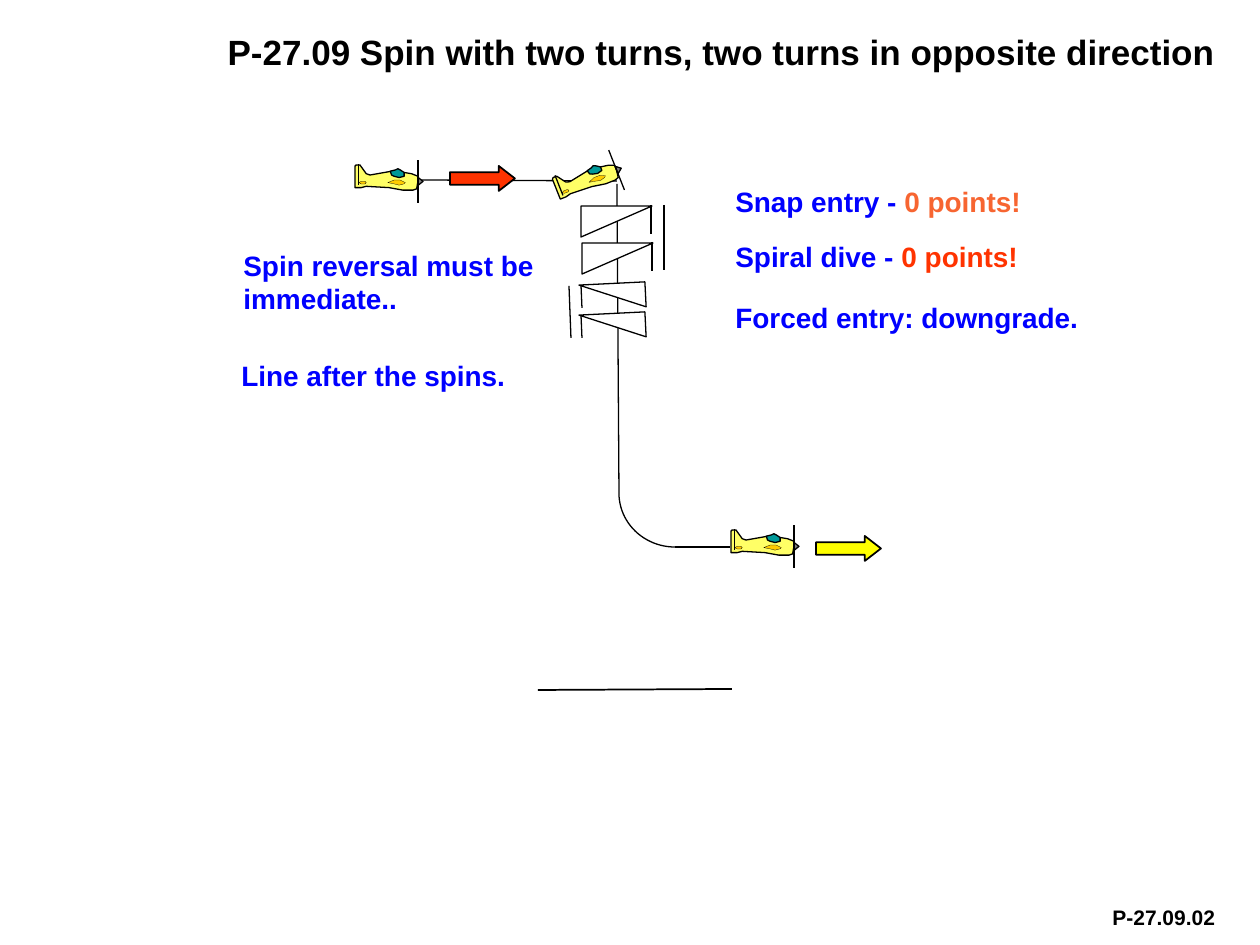
import math

import pptx
import pptx.dml.color
import pptx.enum.shapes
import pptx.enum.text
import pptx.oxml
import pptx.util

SHAPE = pptx.enum.shapes.MSO_SHAPE
ALIGN = pptx.enum.text.PP_ALIGN
SCALE = 914400 / 126
PLANE_UNIT = 1.26

FUSELAGE = [(39, 6), (45, 7), (50, 9), (50, 13), (49, 19), (46, 20), (38, 20),
            (27, 18), (9, 17), (5, 18), (0, 18), (0, 1), (1, 0), (4, 0), (9, 7),
            (12, 8), (29, 5), (30, 8), (35, 9), (38, 8)]
CANOPY = [(28, 5), (29, 8), (31, 9), (35, 10), (39, 9), (39, 6), (36, 4), (34, 3), (32, 4)]
WING = [(26, 14), (31, 12), (36, 12), (40, 14), (39, 15), (35, 16), (31, 15)]
TAILPLANE = [(3, 14), (5, 15), (8, 15), (9, 14), (8, 13), (5, 13)]
PLANE_PARTS = [(FUSELAGE, "FFFF66", 0.75), (CANOPY, "009999", 0.75),
               (WING, "FFCC00", 0.13), (TAILPLANE, "FFCC00", 0.13)]


def px(value):
    return pptx.util.Emu(round(value * SCALE))


def rgb(value):
    return pptx.dml.color.RGBColor.from_string(value)


def add_run(paragraph, text, size=16, color="0000FF", font="Arial", bold=True):
    run = paragraph.add_run()
    run.text = text
    run.font.name = font
    run.font.size = pptx.util.Pt(size)
    run.font.bold = bold
    run.font.color.rgb = rgb(color)


class SlideBuilder:
    def __init__(self, slide, ink="000000", width=0.75):
        self.slide = slide
        self.shapes = slide.shapes
        self.ink = ink
        self.width = width

    def outline(self, line, width):
        line.color.rgb = rgb(self.ink)
        line.width = pptx.util.Pt(width or self.width)

    def title(self, text, left, top, width, height):
        shape = self.shapes.title
        shape.left, shape.top, shape.width, shape.height = map(px, (left, top, width, height))
        frame = shape.text_frame
        frame.word_wrap = True
        frame.auto_size = pptx.enum.text.MSO_AUTO_SIZE.NONE
        frame.vertical_anchor = pptx.enum.text.MSO_ANCHOR.MIDDLE
        frame.paragraphs[0].alignment = ALIGN.LEFT
        add_run(frame.paragraphs[0], text, size=20, color=self.ink)

    def text(self, runs, left, top, width, height, align=ALIGN.LEFT, spacing=1.0, size=16):
        shape = self.shapes.add_textbox(*map(px, (left, top, width, height)))
        shape.text_frame.word_wrap = True
        paragraph = shape.text_frame.paragraphs[0]
        paragraph.alignment = align
        paragraph.line_spacing = spacing
        for text, color in runs:
            add_run(paragraph, text, size=size, color=color)

    def line(self, start, end, width=None):
        connector = self.shapes.add_connector(
            pptx.enum.shapes.MSO_CONNECTOR.STRAIGHT, *map(px, (*start, *end)))
        self.outline(connector.line, width)
        connector._element.spPr.append(pptx.oxml.parse_xml(
            '<a:effectLst xmlns:a="http://schemas.openxmlformats.org/drawingml/2006/main"/>'))

    def paint(self, shape, fill, width=None):
        shape.shadow.inherit = False
        if fill:
            shape.fill.solid()
            shape.fill.fore_color.rgb = rgb(fill)
        else:
            shape.fill.background()
        self.outline(shape.line, width)

    def preset(self, kind, left, top, width, height, fill=None, rotation=0,
               adjustments=(), flip=False, line_width=None):
        shape = self.shapes.add_shape(kind, *map(px, (left, top, width, height)))
        for index, value in enumerate(adjustments):
            shape.adjustments[index] = value
        shape.rotation = rotation
        if flip:
            shape._element.spPr.xfrm.set("flipH", "1")
        self.paint(shape, fill, line_width)

    def outline_shape(self, points, fill, width):
        start, *rest = [(px(x), px(y)) for x, y in points]
        builder = self.shapes.build_freeform(*start, scale=1.0)
        builder.add_line_segments(rest, close=True)
        self.paint(builder.convert_to_shape(), fill, width)

    def arrow(self, left, top, fill):
        self.preset(SHAPE.RIGHT_ARROW, left, top, 65, 25, fill,
                    adjustments=(0.5, 0.645), line_width=1)

    def plane(self, left, top, angle=0):
        cosine = math.cos(math.radians(angle)) * PLANE_UNIT
        sine = math.sin(math.radians(angle)) * PLANE_UNIT

        def place(point):
            x, y = point
            return left + x * cosine - y * sine, top + x * sine + y * cosine

        for points, fill, width in PLANE_PARTS:
            self.outline_shape(map(place, points), fill, width)
        self.line(place((3, 16)), place((3, -1)))
        nose_x, nose_y = place((52, 13))
        self.preset(SHAPE.ISOSCELES_TRIANGLE, nose_x - 4, nose_y - 2.5, 8, 5,
                    "808080", rotation=90 + angle)
        self.line(place((50, 30)), place((50, -4)))

    def spin_turn(self, left, top, width, height, rotation, flip=False):
        self.preset(SHAPE.RIGHT_TRIANGLE, left, top, width, height, "FFFFFF",
                    rotation=rotation, flip=flip)


def main():
    presentation = pptx.Presentation()
    presentation.slide_width = px(1260)
    presentation.slide_height = px(945)
    slide = presentation.slides.add_slide(presentation.slide_layouts[5])
    page = SlideBuilder(slide)

    page.title("P-27.09 Spin with two turns, two turns in opposite direction", 215, 24, 1041, 55)
    page.text([("P-27.09.02", "000000")], 1100, 903, 130, 33, spacing=0.8, size=12)
    page.line((538, 690), (732, 689), width=1)

    page.line((421, 180), (617, 181))
    page.line((617, 184), (619, 493))
    page.preset(SHAPE.ARC, 619, 439, 112, 108, adjustments=(54, 108))
    page.line((675, 547), (730, 547))

    page.plane(355, 165)
    page.plane(552, 178, angle=-21.6)
    page.plane(731, 530)
    page.arrow(450, 166, "FF3300")
    page.arrow(816, 536, "FFFF00")

    for left, top in ((601, 186), (602, 223)):
        page.spin_turn(left, top, 31, 71, 90)
        page.line((left + 50, top + 19), (left + 50, top + 48))
    page.line((664, 205), (664, 270))
    for top in (263, 293):
        page.spin_turn(600, top, 25, 66, 267.2, flip=True)
        page.line((581, top + 22), (582, top + 45))
    page.line((569, 286), (571, 338))

    blue = "0000FF"
    page.text([("Snap entry - ", blue), ("0 points!", "F76531")], 653, 178, 450, 47,
              align=ALIGN.CENTER)
    page.text([("Spiral dive - ", blue), ("0 points!", "FF3300")], 723, 233, 450, 47)
    page.text([("Forced entry: downgrade.", blue)], 723, 294, 450, 47)
    page.text([("Spin reversal must be immediate..", blue)], 231, 242, 331, 81)
    page.text([("Line after the spins.", blue)], 229, 352, 450, 47)

    presentation.save("out.pptx")


if __name__ == "__main__":
    main()
